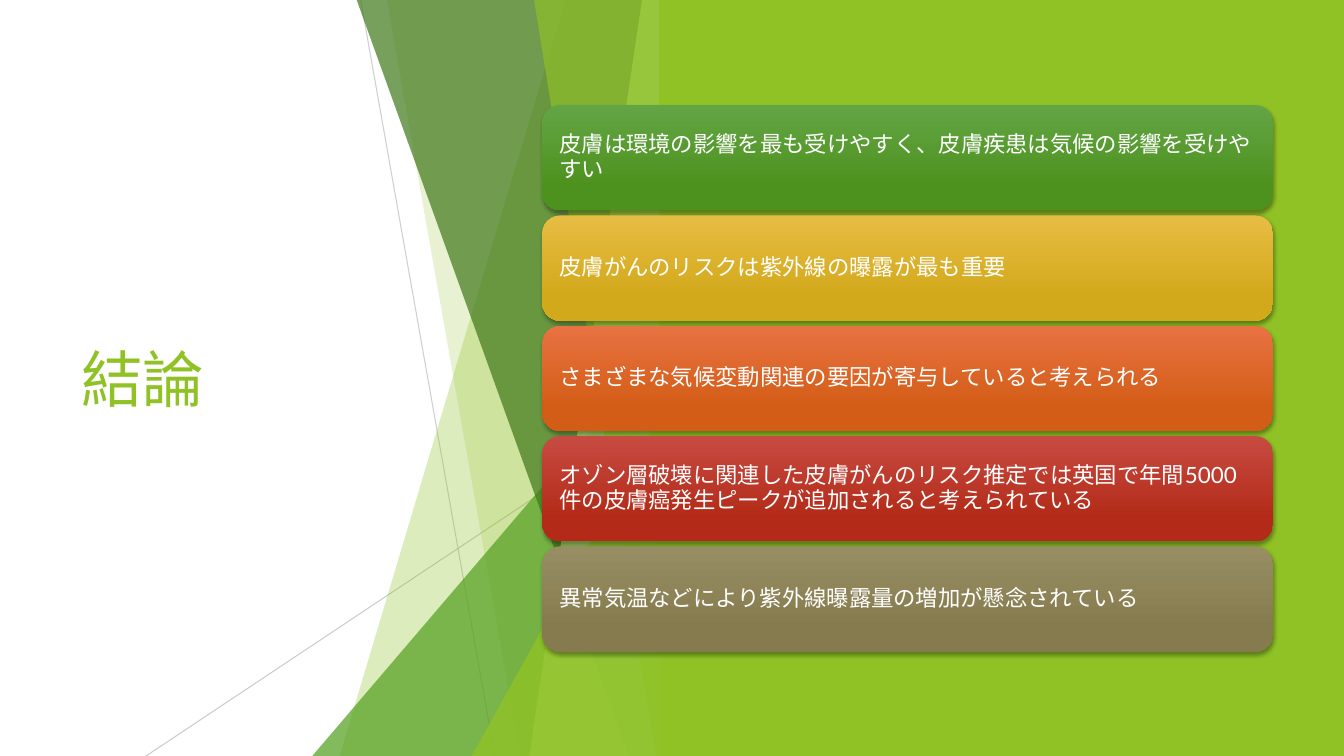
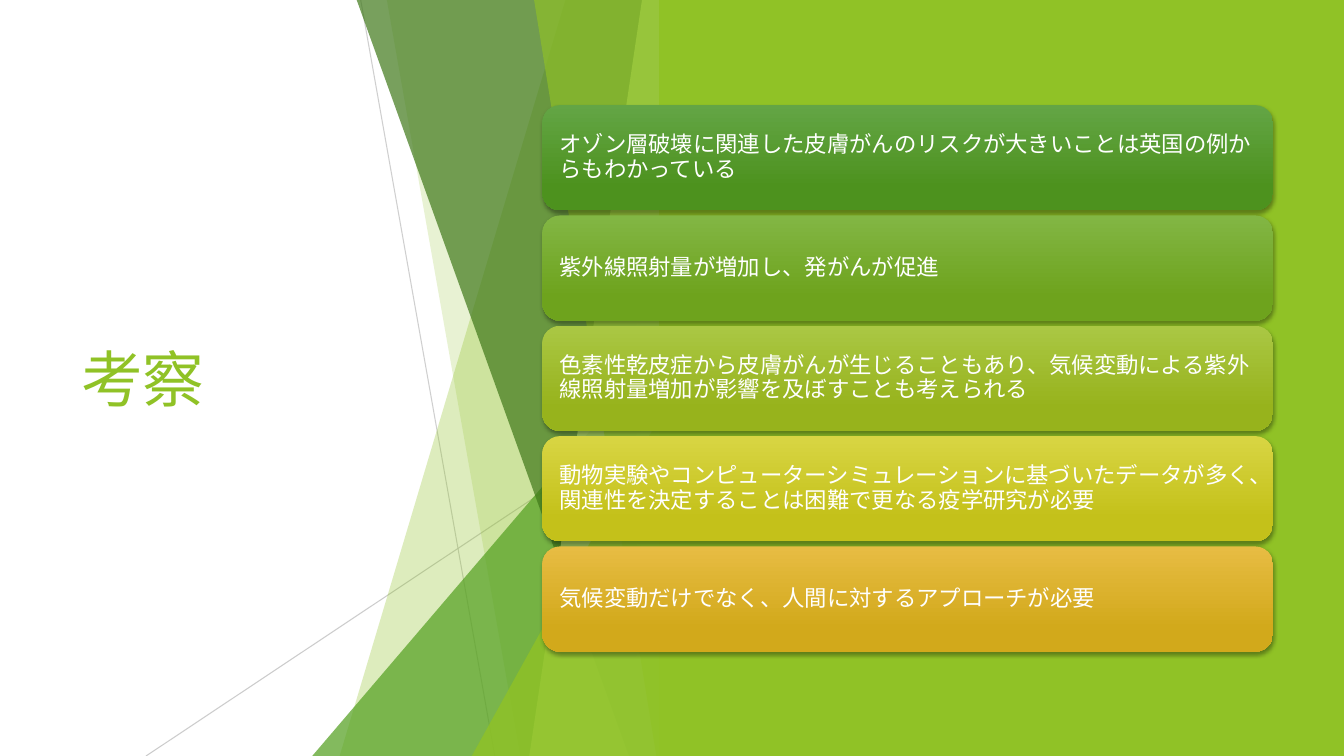
from dataclasses import dataclass

from lxml.etree import SubElement
from pptx import Presentation
from pptx.dml.color import RGBColor
from pptx.enum.shapes import MSO_CONNECTOR as Connector, MSO_SHAPE as Preset
from pptx.enum.text import MSO_ANCHOR as Anchor, MSO_AUTO_SIZE as AutoSize, PP_ALIGN as Align
from pptx.oxml.ns import qn
from pptx.util import Cm, Pt


@dataclass(frozen=True)
class Theme:
    font: str = "Lato"
    title_size: int = 44
    card_size: int = 16
    white: str = "FFFFFF"
    shadow: str = "000000"
    rule: str = "BFBFBF"
    lime: str = "90C226"
    pale_lime: str = "C0E474"
    green: str = "54A021"
    dark_green: str = "3F7819"
    card_green: tuple = ("63A545", "4D921E")
    card_leaf: tuple = ("82B644", "6EA31D")
    card_olive: tuple = ("AAC744", "97B31C")
    card_yellow: tuple = ("D8D543", "C4C11A")
    card_gold: tuple = ("E7BC43", "D2A91B")
    card_orange: tuple = ("E87242", "D35D16")
    card_red: tuple = ("C74B42", "B32B18")
    card_taupe: tuple = ("988E64", "857B4E")


THEME = Theme()
PAGE_WIDTH, PAGE_HEIGHT = 33.87, 19.05
FACET_RIGHT = 16.92
PANEL_LEFT = 16.61
CARD_LEFT, CARD_TOP, CARD_WIDTH, CARD_HEIGHT, CARD_STEP = 13.67, 2.65, 18.41, 2.65, 2.78

SLIDES = [
    ("結論", [
        ("皮膚は環境の影響を最も受けやすく、皮膚疾患は気候の影響を受けやすい", THEME.card_green),
        ("皮膚がんのリスクは紫外線の曝露が最も重要", THEME.card_gold),
        ("さまざまな気候変動関連の要因が寄与していると考えられる", THEME.card_orange),
        ("オゾン層破壊に関連した皮膚がんのリスク推定では英国で年間5000件の皮膚癌発生ピークが追加されると考えられている",
         THEME.card_red),
        ("異常気温などにより紫外線曝露量の増加が懸念されている", THEME.card_taupe),
    ]),
    ("考察", [
        ("オゾン層破壊に関連した皮膚がんのリスクが大きいことは英国の例からもわかっている", THEME.card_green),
        ("紫外線照射量が増加し、発がんが促進", THEME.card_leaf),
        ("色素性乾皮症から皮膚がんが生じることもあり、気候変動による紫外線照射量増加が影響を及ぼすことも考えられる",
         THEME.card_olive),
        ("動物実験やコンピューターシミュレーションに基づいたデータが多く、関連性を決定することは困難で更なる疫学研究が必要",
         THEME.card_yellow),
        ("気候変動だけでなく、人間に対するアプローチが必要", THEME.card_gold),
    ]),
]


def write_text(frame, text, *, size, color, inset=0.25, line_spacing=1.0, space_after=0):
    frame.word_wrap = True
    frame.auto_size = AutoSize.NONE
    frame.vertical_anchor = Anchor.MIDDLE
    frame.margin_left = frame.margin_right = Cm(inset)
    para = frame.paragraphs[0]
    para.alignment = Align.LEFT
    para.line_spacing = line_spacing
    para.space_after = Pt(space_after)
    span = para.add_run()
    span.text = text
    span.font.name = THEME.font
    span.font.size = Pt(size)
    span.font.color.rgb = RGBColor.from_string(color)


def set_opacity(shape, percent):
    for color in shape._element.spPr.iter(qn("a:srgbClr")):
        SubElement(color, qn("a:alpha"), val=str(percent * 1000))


class Painter:
    def __init__(self, deck, theme):
        self.deck = deck
        self.theme = theme
        self.page = None

    def start(self):
        self.page = self.deck.slides.add_slide(self.deck.slide_layouts[5])

    def title(self, text):
        box = self.page.shapes.title
        box.left, box.top, box.width, box.height = Cm(1.8), Cm(3.84), Cm(9.86), Cm(11.38)
        write_text(box.text_frame, text, size=self.theme.title_size, color=self.theme.lime)

    def rule(self, start, end, opacity):
        x1, y1, x2, y2 = map(Cm, start + end)
        line = self.page.shapes.add_connector(Connector.STRAIGHT, x1, y1, x2, y2)
        line.line.color.rgb = RGBColor.from_string(self.theme.rule)
        line.line.width = Pt(0.75)
        set_opacity(line, opacity)
        SubElement(line._element.spPr, qn("a:effectLst"))

    def paint(self, shape, color, opacity=100):
        shape.shadow.inherit = False
        shape.line.fill.background()
        shape.fill.solid()
        shape.fill.fore_color.rgb = RGBColor.from_string(color)
        if opacity < 100:
            set_opacity(shape, opacity)

    def facet(self, top_x, bottom_x, color, opacity):
        right, bottom = Cm(FACET_RIGHT), Cm(PAGE_HEIGHT)
        outline = self.page.shapes.build_freeform(Cm(top_x), 0)
        outline.add_line_segments([(right, 0), (right, bottom), (Cm(bottom_x), bottom)])
        self.paint(outline.convert_to_shape(), color, opacity)

    def triangle(self, left, top, color, opacity):
        shape = self.page.shapes.add_shape(
            Preset.ISOSCELES_TRIANGLE, Cm(left), Cm(top),
            Cm(FACET_RIGHT - left), Cm(PAGE_HEIGHT - top))
        shape.adjustments[0] = 1
        self.paint(shape, color, opacity)

    def panel(self):
        shape = self.page.shapes.add_shape(
            Preset.RECTANGLE, Cm(PANEL_LEFT), 0, Cm(PAGE_WIDTH - PANEL_LEFT), Cm(PAGE_HEIGHT))
        self.paint(shape, self.theme.lime)

    def backdrop(self):
        theme = self.theme
        self.rule((9.09, 0), (12.47, PAGE_HEIGHT), 75)
        self.rule((FACET_RIGHT, 10.24), (3.68, PAGE_HEIGHT), 80)
        self.facet(14.25, 8.56, theme.lime, 30)
        self.facet(9.75, 13.11, theme.lime, 20)
        self.triangle(7.87, 8.46, theme.green, 72)
        self.facet(8.99, 15.85, theme.dark_green, 70)
        self.facet(16.18, 13.34, theme.pale_lime, 70)
        self.facet(13.46, 16.54, theme.lime, 65)
        self.triangle(11.89, 9.98, theme.lime, 80)
        self.panel()

    def card(self, row, text, colors):
        shape = self.page.shapes.add_shape(
            Preset.ROUNDED_RECTANGLE, Cm(CARD_LEFT), Cm(CARD_TOP + row * CARD_STEP),
            Cm(CARD_WIDTH), Cm(CARD_HEIGHT))
        shape.line.fill.background()
        shape.fill.gradient()
        shape.fill.gradient_angle = 270
        for stop, position, color in zip(shape.fill.gradient_stops, (0, 0.78), colors):
            stop.position = position
            stop.color.rgb = RGBColor.from_string(color)
        self.drop_shadow(shape)
        write_text(shape.text_frame, text, size=self.theme.card_size, color=self.theme.white,
                   inset=0.3, line_spacing=0.9, space_after=5.6)

    def drop_shadow(self, shape):
        shape.shadow.inherit = False
        effects = shape._element.spPr.find(qn("a:effectLst"))
        shadow = SubElement(effects, qn("a:outerShdw"), blurRad=str(Pt(3)), dist=str(Pt(2)),
                            dir="5400000", rotWithShape="0")
        color = SubElement(shadow, qn("a:srgbClr"), val=self.theme.shadow)
        SubElement(color, qn("a:alpha"), val="35000")


def main():
    deck = Presentation()
    deck.slide_width, deck.slide_height = Cm(PAGE_WIDTH), Cm(PAGE_HEIGHT)
    painter = Painter(deck, THEME)
    for title, cards in SLIDES:
        painter.start()
        painter.title(title)
        painter.backdrop()
        for row, (text, colors) in enumerate(cards):
            painter.card(row, text, colors)
    deck.save("out.pptx")


if __name__ == "__main__":
    main()
